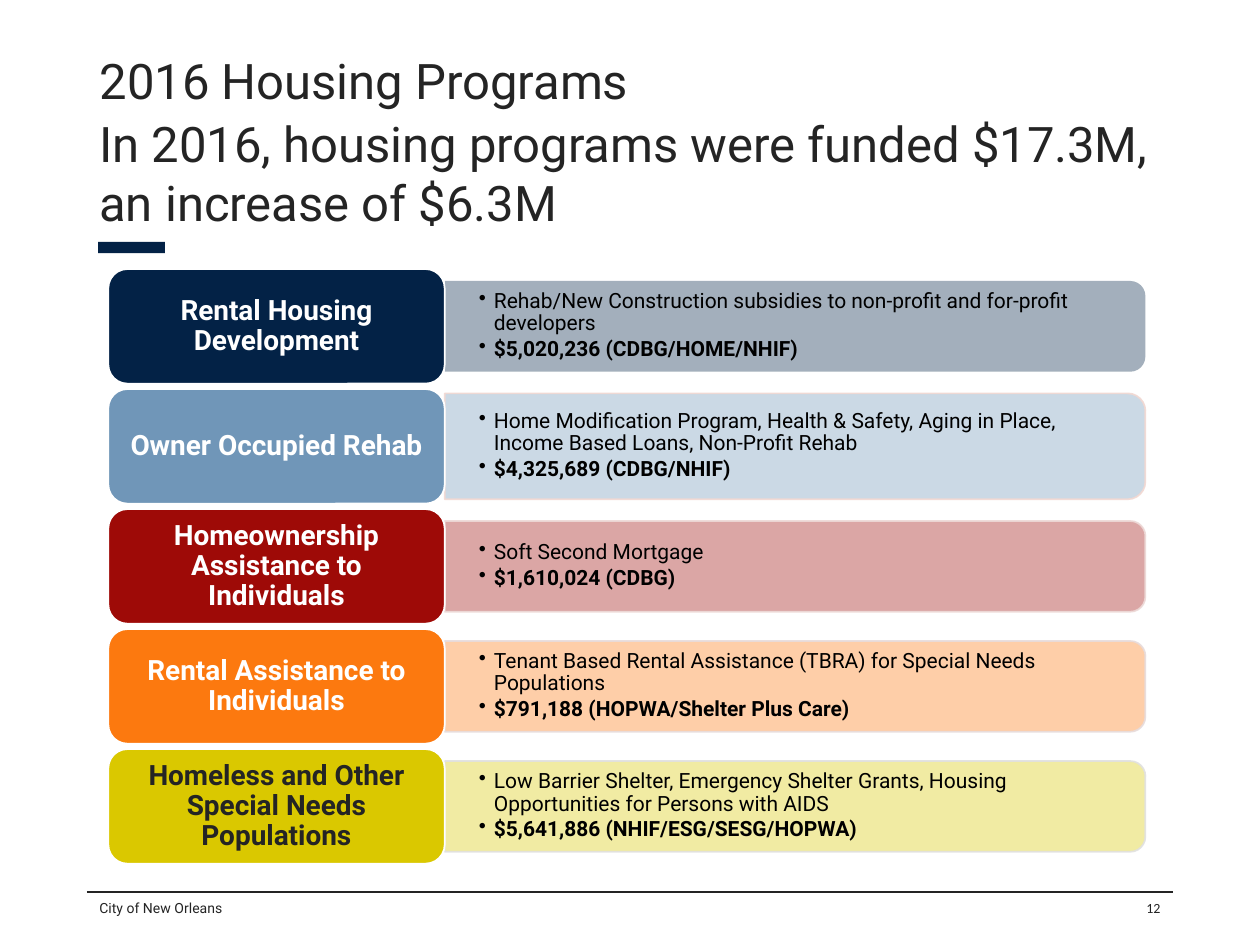
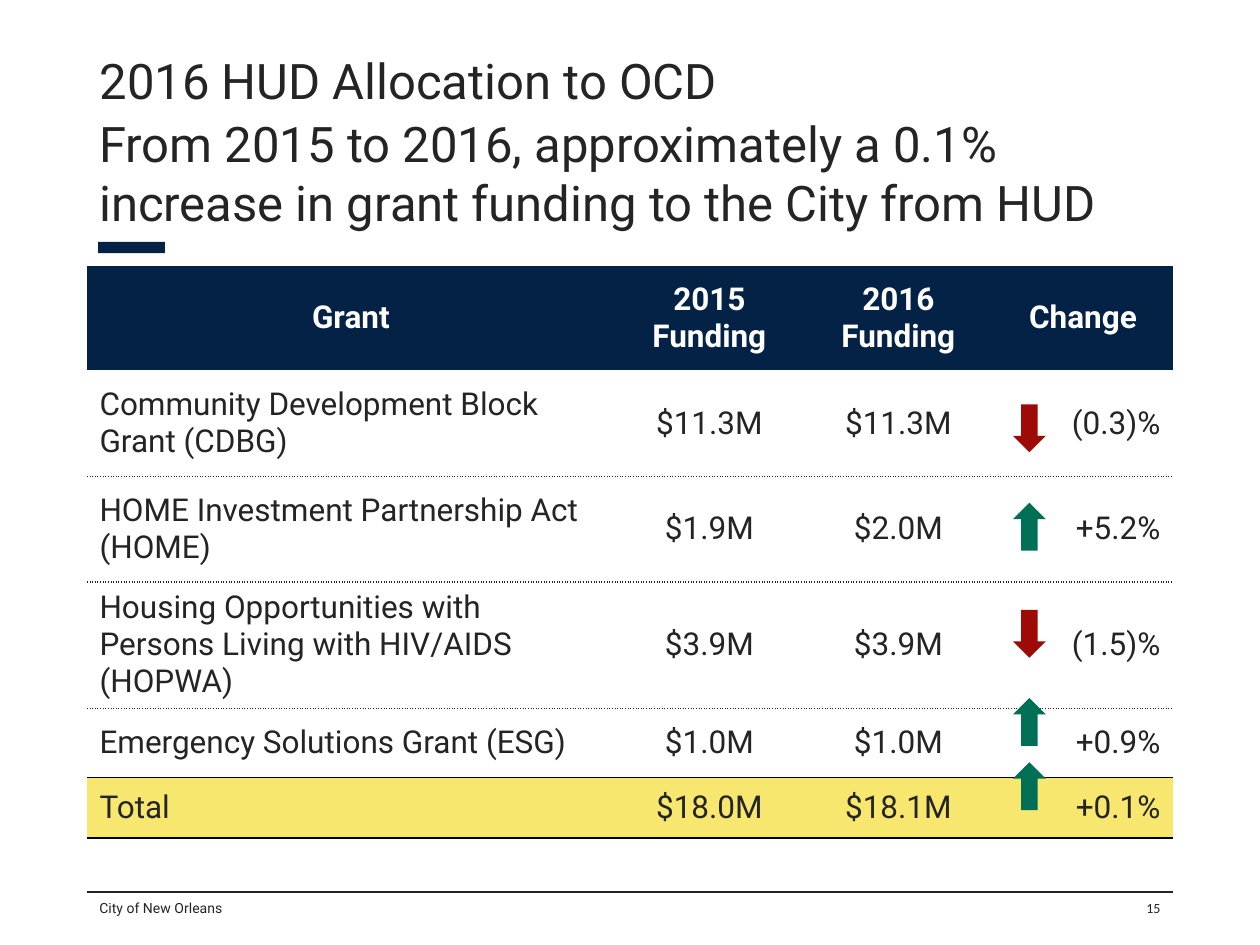
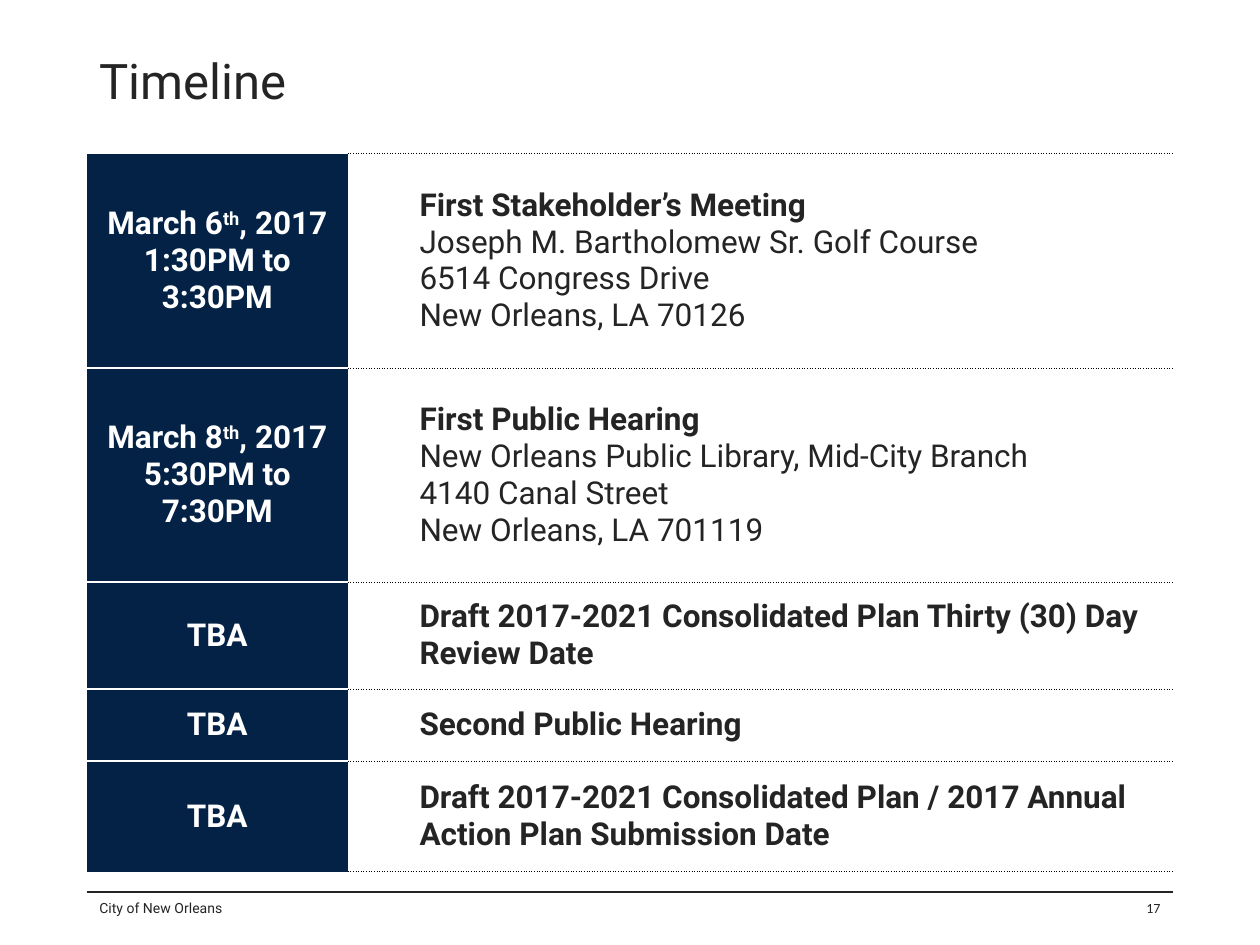
from pptx import Presentation
from pptx.dml.color import RGBColor
from pptx.enum.shapes import MSO_CONNECTOR, MSO_SHAPE as Shape
from pptx.enum.text import MSO_ANCHOR as Anchor, MSO_AUTO_SIZE, PP_ALIGN as Align
from pptx.oxml.ns import qn
from pptx.util import Inches, Pt
from lxml.etree import SubElement

NAVY = RGBColor(0x03, 0x22, 0x46)
INK = RGBColor(0x24, 0x24, 0x24)
WHITE = RGBColor(0xFF, 0xFF, 0xFF)
BLACK = RGBColor(0, 0, 0)
BLUE = RGBColor(0x70, 0x96, 0xB8)
RED = RGBColor(0x9E, 0x0A, 0x07)
ORANGE = RGBColor(0xFC, 0x79, 0x0F)
OLIVE = RGBColor(0xDA, 0xC8, 0x00)
GREEN = RGBColor(0x01, 0x6F, 0x56)
YELLOW = RGBColor(0xF7, 0xE7, 0x6F)
PALE_NAVY = RGBColor(0x9A, 0xA7, 0xB5)
PALE_BLUE = RGBColor(0xC6, 0xD5, 0xE3)
PALE_RED = RGBColor(0xD8, 0x9D, 0x9C)
PALE_ORANGE = RGBColor(0xFE, 0xC9, 0x9F)
PALE_OLIVE = RGBColor(0xF0, 0xE9, 0x99)
BLUE_EDGE = RGBColor(0xF2, 0xD8, 0xD2)
RED_EDGE = RGBColor(0xED, 0xD9, 0xD7)
ORANGE_EDGE = RGBColor(0xE7, 0xDC, 0xDC)
OLIVE_EDGE = RGBColor(0xE1, 0xE1, 0xE1)

LEFT, WIDTH = 0.69, 8.62
NO_GRID_STYLE = "{2D5ABB26-0587-4C30-8999-92F81FD0307C}"
DOTTED = (INK, 0.75, "sysDot")
FINE_DOTTED = (BLACK, 0.5, "sysDot")
SOLID = (BLACK, 1, "solid")
WHITE_RULE = (WHITE, 1, "solid")

PROGRAMS = [
    ("Rental Housing Development", NAVY, WHITE, PALE_NAVY, None, 0.72,
     "Rehab/New Construction subsidies to non-profit and for-profit developers",
     "$5,020,236 (CDBG/HOME/NHIF)"),
    ("Owner Occupied Rehab", BLUE, WHITE, PALE_BLUE, BLUE_EDGE, 0.84,
     "Home Modification Program, Health & Safety, Aging in Place, Income Based Loans, Non-Profit Rehab",
     "$4,325,689 (CDBG/NHIF)"),
    ("Homeownership Assistance to Individuals", RED, WHITE, PALE_RED, RED_EDGE, 0.72,
     "Soft Second Mortgage", "$1,610,024 (CDBG)"),
    ("Rental Assistance to Individuals", ORANGE, WHITE, PALE_ORANGE, ORANGE_EDGE, 0.72,
     "Tenant Based Rental Assistance (TBRA) for Special Needs Populations",
     "$791,188 (HOPWA/Shelter Plus Care)"),
    ("Homeless and Other Special Needs Populations", OLIVE, INK, PALE_OLIVE, OLIVE_EDGE, 0.72,
     "Low Barrier Shelter, Emergency Shelter Grants, Housing Opportunities for Persons with AIDS",
     "$5,641,886 (NHIF/ESG/SESG/HOPWA)"),
]

GRANTS = [
    ("Grant", "2015 Funding", "2016 Funding", "Change"),
    ("Community Development Block Grant (CDBG)", "$11.3M", "$11.3M", "(0.3)%"),
    ("HOME Investment Partnership Act (HOME)", "$1.9M", "$2.0M", "+5.2%"),
    ("Housing Opportunities with Persons Living with HIV/AIDS (HOPWA)", "$3.9M", "$3.9M", "(1.5)%"),
    ("Emergency Solutions Grant (ESG)", "$1.0M", "$1.0M", "+0.9%"),
    ("Total", "$18.0M", "$18.1M", "+0.1%"),
]
ARROW_TOPS = [3.21, 3.99, 4.84, 5.54, 6.05]

EVENTS = [
    (["March 6^th^, 2017", "1:30PM to 3:30PM"],
     ["First Stakeholder’s Meeting", "Joseph M. Bartholomew Sr. Golf Course",
      "6514 Congress Drive", "New Orleans, LA 70126"]),
    (["March 8^th^, 2017", "5:30PM to 7:30PM"],
     ["First Public Hearing", "New Orleans Public Library, Mid-City Branch",
      "4140 Canal Street", "New Orleans, LA 701119"]),
    (["TBA"], ["Draft 2017-2021 Consolidated Plan Thirty (30) Day Review Date"]),
    (["TBA"], ["Second Public Hearing"]),
    (["TBA"], ["Draft 2017-2021 Consolidated Plan / 2017 Annual Action Plan Submission Date"]),
]


class Deck:
    def __init__(self):
        self.deck = Presentation()
        self.deck.slide_width, self.deck.slide_height = Inches(10), Inches(7.5)
        self.shapes = None

    def page(self, title, number, subtitle=None):
        self.shapes = self.deck.slides.add_slide(self.deck.slide_layouts[5]).shapes
        heading = self.shapes.title
        heading.left, heading.top = Inches(LEFT), Inches(0.4)
        heading.width, heading.height = Inches(WIDTH), Inches(0.43)
        heading.text_frame.auto_size = MSO_AUTO_SIZE.NONE
        heading.text_frame.vertical_anchor = Anchor.TOP
        self.fill_text(heading.text_frame, [title], 28, spacing=0.9)
        if subtitle:
            self.text(LEFT, 0.85, WIDTH, 0.99, [subtitle], 28)
            self.shape(Shape.RECTANGLE, 0.78, 1.92, 0.53, 0.09, NAVY)
        self.rule(7.08)
        self.text(LEFT, 7.09, 2.05, 0.24, ["City of New Orleans"], 8)
        self.text(7.76, 7.09, 1.55, 0.24, [str(number)], 8, align=Align.RIGHT, font="Calibri")

    def fill_text(self, frame, lines, size, color=INK, bold=False, align=Align.LEFT,
                  font="Roboto", spacing=None, indent=0, bullet=False, after=0, lead_bold=None):
        frame.word_wrap = True
        for index, line in enumerate(lines):
            para = frame.paragraphs[0] if index == 0 else frame.add_paragraph()
            if indent:
                para.level = 1
                props = para._p.get_or_add_pPr()
                props.set("marL", str(Inches(indent)))
                props.set("indent", str(-Inches(indent) if bullet else 0))
                if bullet:
                    SubElement(props, qn("a:buChar")).set("char", "•")
            for part, piece in enumerate(line.split("^")):
                span = para.add_run()
                span.text = piece
                if part % 2:
                    span._r.get_or_add_rPr().set("baseline", "30000")
            para.alignment = align
            if spacing:
                para.line_spacing = spacing
            if after:
                para.space_after = Pt(after)
            para.font.name, para.font.size = font, Pt(size)
            para.font.color.rgb = color
            para.font.bold = lead_bold if index == 0 and lead_bold is not None else bold

    def inset(self, frame, across, down):
        frame.margin_left = frame.margin_right = Inches(across)
        frame.margin_top = frame.margin_bottom = Inches(down)
        frame.vertical_anchor = Anchor.MIDDLE

    def text(self, left, top, width, height, lines, size, **style):
        box = self.shapes.add_textbox(Inches(left), Inches(top), Inches(width), Inches(height))
        self.fill_text(box.text_frame, lines, size, **style)
        return box

    def shape(self, kind, left, top, width, height, fill, line=None):
        shape = self.shapes.add_shape(kind, Inches(left), Inches(top), Inches(width), Inches(height))
        shape.shadow.inherit = False
        shape.fill.solid()
        shape.fill.fore_color.rgb = fill
        if line is None:
            shape.line.fill.background()
        else:
            shape.line.color.rgb = line
            shape.line.width = Pt(1)
        return shape

    def rule(self, top):
        line = self.shapes.add_connector(MSO_CONNECTOR.STRAIGHT, Inches(LEFT), Inches(top),
                                         Inches(LEFT + WIDTH), Inches(top))
        line.line.color.rgb = INK
        line.line.width = Pt(1)
        SubElement(line._element.spPr, qn("a:effectLst"))

    def program(self, middle, label, fill, ink, pale, edge, height, detail, amount):
        left, length = 3.53, 5.56
        center = left + length / 2
        bar = self.shape(Shape.ROUND_2_SAME_RECTANGLE, center - height / 2,
                         middle - length / 2, height, length, pale, edge)
        bar.rotation = 90
        for color in bar._element.spPr.iter(qn("a:srgbClr")):
            SubElement(color, qn("a:alpha")).set("val", "90000")
        box = self.text(left, middle - 0.33, 5.52, 0.65, [detail, amount], 12, color=BLACK,
                        bold=True, lead_bold=False, spacing=0.9, indent=0.12, bullet=True, after=1.8)
        self.inset(box.text_frame, 0.27, 0.14)
        card = self.shape(Shape.ROUNDED_RECTANGLE, 0.86, middle - 0.455, 2.67, 0.91, fill, WHITE)
        self.inset(card.text_frame, 0.11, 0.08)
        self.fill_text(card.text_frame, [label], 16, ink, True, Align.CENTER, spacing=0.9)

    def table(self, top, widths, heights):
        frame = self.shapes.add_table(len(heights), len(widths), Inches(LEFT), Inches(top),
                                      Inches(sum(widths)), Inches(sum(heights)))
        table = frame.table
        table.first_row = table.horz_banding = False
        table._tbl.tblPr.find(qn("a:tableStyleId")).text = NO_GRID_STYLE
        for column, width in zip(table.columns, widths):
            column.width = Inches(width)
        for row, height in zip(table.rows, heights):
            row.height = Inches(height)
        return table

    def cell(self, cell, lines, edges, fill=None, margins=(0.1, 0.05), **style):
        self.inset(cell, *margins)
        for tag, edge in zip(("a:lnT", "a:lnB"), edges):
            if edge:
                color, width, dash = edge
                line = SubElement(cell._tc.get_or_add_tcPr(), qn(tag), w=str(Pt(width)))
                solid = SubElement(line, qn("a:solidFill"))
                SubElement(solid, qn("a:srgbClr"), val=str(color))
                SubElement(line, qn("a:prstDash"), val=dash)
        if fill is None:
            cell.fill.background()
        else:
            cell.fill.solid()
            cell.fill.fore_color.rgb = fill
        self.fill_text(cell.text_frame, lines, 18, **style)


def housing_programs(deck):
    deck.page("2016 Housing Programs", 12,
              "In 2016, housing programs were funded $17.3M, an increase of $6.3M")
    first, last = 2.59, 6.4
    pitch = (last - first) / (len(PROGRAMS) - 1)
    for index, program in enumerate(PROGRAMS):
        deck.program(first + index * pitch, *program)


def hud_allocation(deck):
    deck.page("2016 HUD Allocation to OCD", 15,
              "From 2015 to 2016, approximately a 0.1% increase in grant funding to the City from HUD")
    table = deck.table(2.11, [4.19, 1.5, 1.5, 1.43], [0.83, 0.84, 0.84, 0.84, 0.55, 0.48])
    edges = [None, None, DOTTED, DOTTED, DOTTED, SOLID, SOLID]
    fills = [NAVY, None, None, None, None, YELLOW]
    aligns = [Align.LEFT, Align.CENTER, Align.CENTER, Align.RIGHT]
    for row, grant in enumerate(GRANTS):
        header = row == 0
        for column, value in enumerate(grant):
            deck.cell(table.cell(row, column), [value], edges[row:row + 2], fills[row],
                      color=WHITE if header else INK, bold=header,
                      align=Align.CENTER if header else aligns[column])
    for top, grant in zip(ARROW_TOPS, GRANTS[1:]):
        rising = grant[-1].startswith("+")
        deck.shape(Shape.UP_ARROW if rising else Shape.DOWN_ARROW, 8.04, top, 0.26, 0.38,
                   GREEN if rising else RED)


def timeline(deck):
    deck.page("Timeline", 17)
    table = deck.table(1.22, [2.07, 6.55], [1.7, 1.7, 0.85, 0.57, 0.88])
    date_edges = [None] + [WHITE_RULE] * (len(EVENTS) - 1) + [None]
    margins = (0.07, 0)
    for row, (date, event) in enumerate(EVENTS):
        deck.cell(table.cell(row, 0), date, date_edges[row:row + 2], NAVY, margins,
                  color=WHITE, bold=True, align=Align.CENTER)
        deck.cell(table.cell(row, 1), event, [FINE_DOTTED] * 2, None, margins,
                  lead_bold=True, indent=0.5)


def main():
    deck = Deck()
    housing_programs(deck)
    hud_allocation(deck)
    timeline(deck)
    deck.deck.save("out.pptx")


if __name__ == "__main__":
    main()
